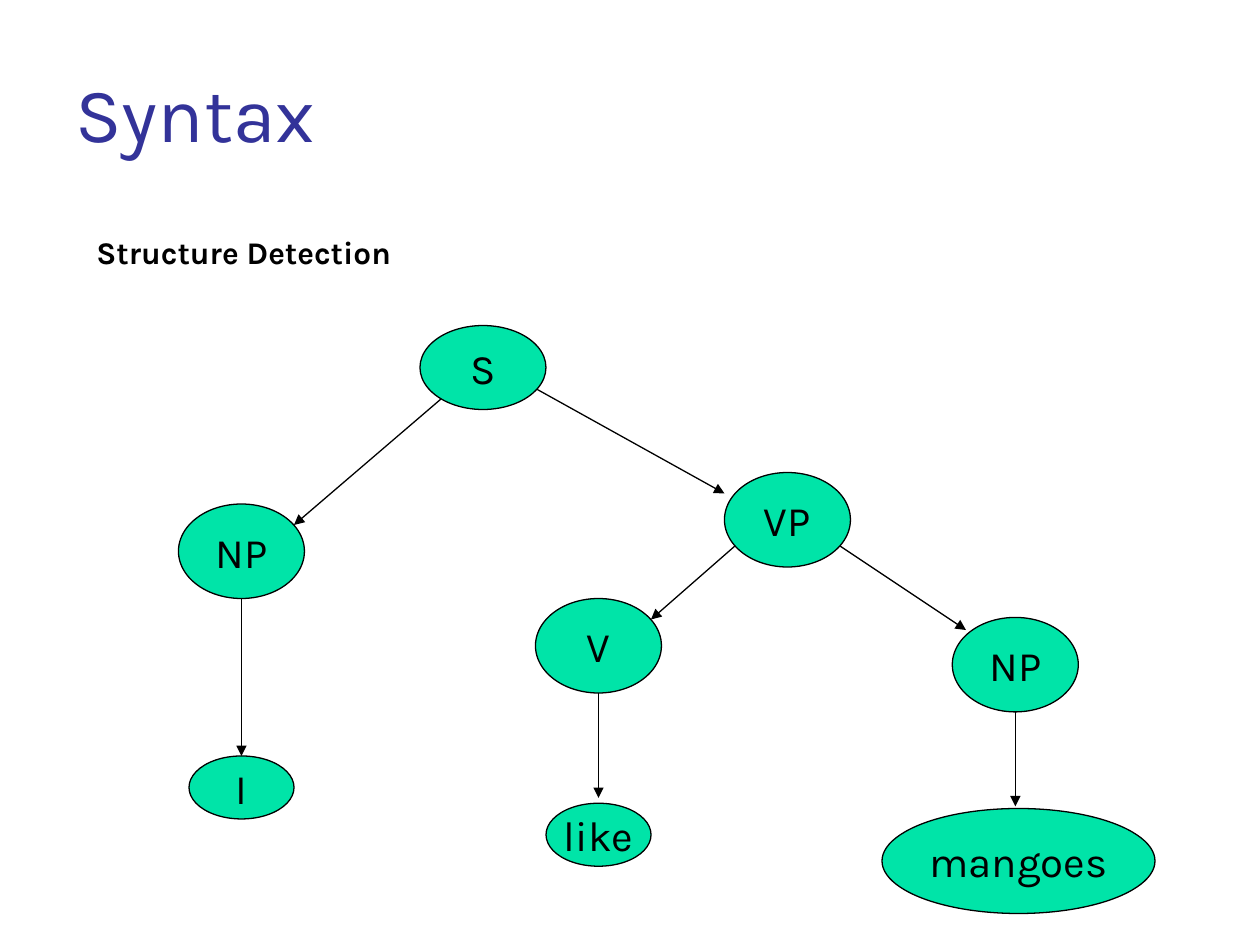
from lxml.etree import SubElement
from pptx import Presentation
from pptx.dml.color import RGBColor
from pptx.enum.shapes import MSO_CONNECTOR, MSO_SHAPE
from pptx.enum.text import MSO_ANCHOR as ANCHOR, PP_ALIGN as ALIGN
from pptx.oxml.ns import qn
from pptx.util import Inches, Pt

FONT, BLACK, GREEN, INDIGO = "Karla", "000000", "00E4A8", "333399"
COLS, ROWS = 120, 90  # grid of twelve cells to the inch

# Tree nodes: word, left, top, width, height in grid cells
NODES = [
    ("S", 40, 31, 12, 8),
    ("NP", 17, 48, 12, 9),
    ("VP", 69, 45, 12, 9),
    ("V", 51, 57, 12, 9),
    ("NP", 90.7, 58.8, 12, 9),
    ("I", 18, 72, 10, 6),
    ("like", 52, 76.5, 10, 6),
    ("mangoes", 84, 77, 26, 10),
]
# Branches: start column and row, end column and row
BRANCHES = [
    (42, 38, 28, 50),
    (51, 37, 69, 47),
    (70, 52, 62, 59),
    (80, 52, 92, 60),
    (23, 57, 23, 72),
    (57, 66, 57, 76),
    (96.7, 67.8, 96.7, 76.8),
]


def color(value):
    return RGBColor.from_string(value)


def grid(*cells):
    return [Inches(cell / 12) for cell in cells]


def apply(obj, formats):
    for name, value in formats.items():
        setattr(obj, name, value)


def write(sp, text, size, ink, frame, para, bold=False):
    tf = sp.text_frame
    apply(tf, frame)
    p = tf.paragraphs[0]
    apply(p, para)
    r = p.add_run()
    r.text = text
    apply(r.font, {"name": FONT, "size": Pt(size), "bold": bold})
    r.font.color.rgb = color(ink)
    return p


def add_text(s, box, *args, **kwargs):
    return write(s.shapes.add_textbox(*grid(*box)), *args, **kwargs)


def outline(line):
    line.color.rgb = color(BLACK)
    line.width = Pt(0.75)


def add_node(s, word, *box):
    sp = s.shapes.add_shape(MSO_SHAPE.OVAL, *grid(*box))
    sp.shadow.inherit = False
    sp.fill.solid()
    sp.fill.fore_color.rgb = color(GREEN)
    outline(sp.line)
    write(sp, word, 24, BLACK,
          {"word_wrap": False, "vertical_anchor": ANCHOR.MIDDLE},
          {"alignment": ALIGN.CENTER})


def add_branch(s, *ends):
    cxn = s.shapes.add_connector(MSO_CONNECTOR.STRAIGHT, *grid(*ends))
    outline(cxn.line)
    SubElement(cxn.line._get_or_add_ln(), qn("a:tailEnd"), type="triangle")
    SubElement(cxn._element.spPr, qn("a:effectLst"))


def main():
    prs = Presentation()
    apply(prs, {"slide_width": Inches(COLS / 12),
                "slide_height": Inches(ROWS / 12)})
    s = prs.slides.add_slide(prs.slide_layouts[6])

    # Title and subheading
    add_text(s, (6, 3.6, 108, 12), "Syntax", 44, INDIGO,
             {"word_wrap": True, "vertical_anchor": ANCHOR.BOTTOM}, {})
    p = add_text(s, (8, 22, 108, 63), "Structure Detection", 18, BLACK,
                 {"word_wrap": True},
                 {"line_spacing": 0.9, "space_before": Pt(3.6)}, bold=True)
    indent = Inches(0.38)
    for name, value in {"marL": indent, "indent": -indent}.items():
        p._p.get_or_add_pPr().set(name, str(value))

    # Syntax tree
    for branch in BRANCHES:
        add_branch(s, *branch)
    for node in NODES:
        add_node(s, *node)

    prs.save("out.pptx")


if __name__ == "__main__":
    main()
